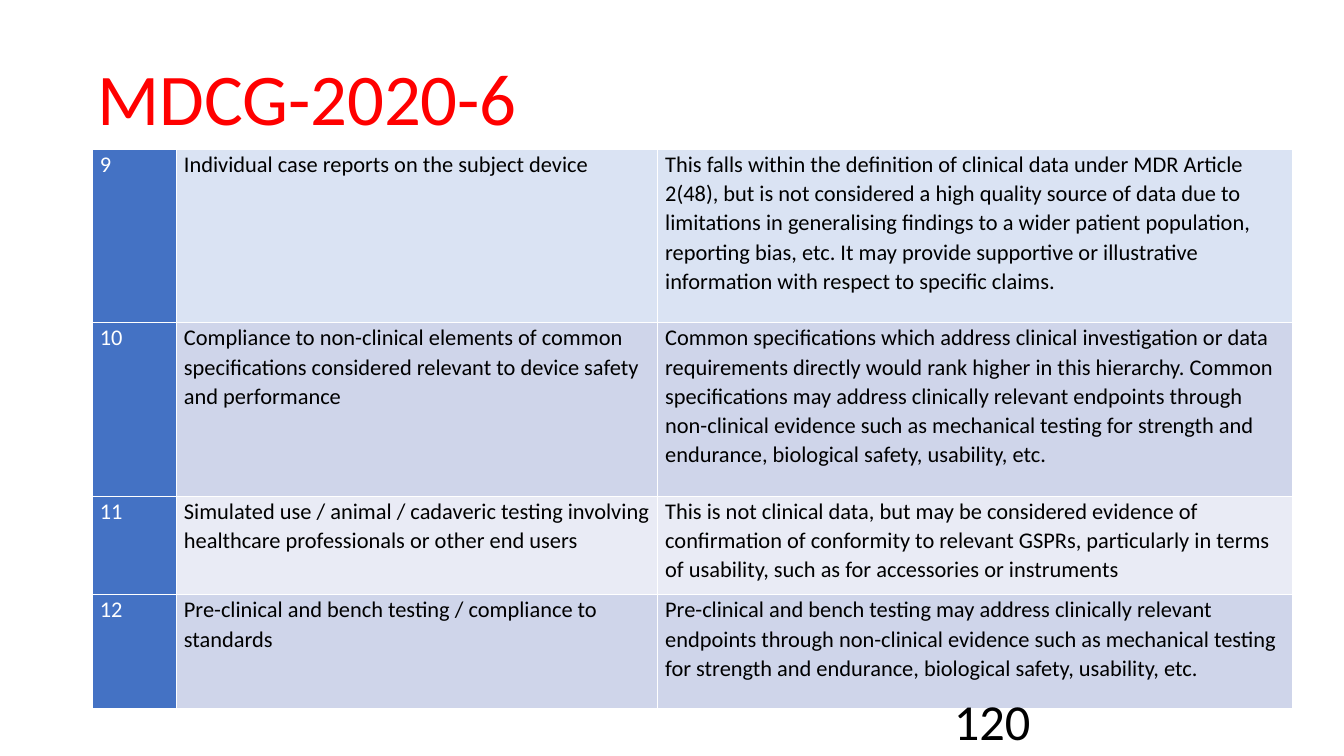
from typing import NamedTuple

from lxml.etree import SubElement as Sub
from pptx import Presentation
from pptx.dml.color import RGBColor
from pptx.enum.text import MSO_ANCHOR as Anchor, PP_ALIGN as Align
from pptx.oxml.ns import qn
from pptx.util import Inches, Pt

WHITE, BLACK, RED, BLUE = "FFFFFF", "000000", "FF0000", "4472C4"
COLS = (1.67, 9.55, 12.59)


class Row(NamedTuple):
    rank: str
    kind: str
    note: str
    high: float
    fill: str


class Label(NamedTuple):
    text: str
    box: tuple[float, float, float, float]
    size: int
    color: str
    lead: float


ROWS = [
    Row("9", "Individual case reports on the subject device",
        "This falls within the definition of clinical data under MDR Article 2(48), "
        "but is not considered a high quality source of data due to limitations in "
        "generalising findings to a wider patient population, reporting bias, etc. "
        "It may provide supportive or illustrative information with respect to "
        "specific claims.", 3.44, "DAE3F3"),
    Row("10", "Compliance to non-clinical elements of common specifications "
        "considered relevant to device safety and performance",
        "Common specifications which address clinical investigation or data "
        "requirements directly would rank higher in this hierarchy. Common "
        "specifications may address clinically relevant endpoints through "
        "non-clinical evidence such as mechanical testing for strength and "
        "endurance, biological safety, usability, etc.", 3.44, "CFD5EA"),
    Row("11", "Simulated use / animal / cadaveric testing involving healthcare "
        "professionals or other end users",
        "This is not clinical data, but may be considered evidence of confirmation "
        "of conformity to relevant GSPRs, particularly in terms of usability, such "
        "as for accessories or instruments", 1.96, "E9EBF5"),
    Row("12", "Pre-clinical and bench testing / compliance to standards",
        "Pre-clinical and bench testing may address clinically relevant endpoints "
        "through non-clinical evidence such as mechanical testing for strength and "
        "endurance, biological safety, usability, etc.", 2.26, "CFD5EA"),
]
LABELS = [
    Label("MDCG-2020-6", (1.83, 0.57, 11.29, 2.9), 104, RED, 0.9),
    Label("120", (18.83, 13.9, 6, 0.8), 72, BLACK, 1),
]


def rgb(code: str) -> RGBColor:
    return RGBColor.from_string(code)


def put(frame, text: str, size: int, color: str, lead: float) -> None:
    """Write one left-aligned paragraph into a text frame."""
    frame.word_wrap = True
    para = frame.paragraphs[0]
    para.alignment, para.line_spacing = Align.LEFT, lead
    run = para.add_run()
    run.text = text
    for key, val in {"name": "Calibri", "size": Pt(size)}.items():
        setattr(run.font, key, val)
    run.font.color.rgb = rgb(color)


def edge(cell) -> None:
    """Give a cell white one-point borders; call it before filling."""
    props = cell._tc.get_or_add_tcPr()
    for side in "LRTB":
        line = Sub(props, qn(f"a:ln{side}"), w=str(Pt(1)))
        Sub(Sub(line, qn("a:solidFill")), qn("a:srgbClr"), val=WHITE)


def draw_cell(cell, text: str, fill: str, color: str) -> None:
    edge(cell)
    cell.fill.solid()
    cell.fill.fore_color.rgb = rgb(fill)
    form = {"margin_left": Inches(0.15), "margin_right": Inches(0.15),
            "margin_top": 0, "margin_bottom": 0}
    for key, val in form.items():
        setattr(cell, key, val)
    put(cell.text_frame, text, 32, color, 1.07)


def draw_table(slide, rows: list[Row]) -> None:
    high = sum(row.high for row in rows)
    table = slide.shapes.add_table(
        len(rows), len(COLS), Inches(1.83), Inches(2.96),
        Inches(sum(COLS)), Inches(high)).table
    table.first_row = table.horz_banding = False
    for col, wide in zip(table.columns, COLS):
        col.width = Inches(wide)
    for row, line in zip(rows, table.rows):
        line.height = Inches(row.high)
        texts = (row.rank, row.kind, row.note)
        for i, (cell, text) in enumerate(zip(line.cells, texts)):
            look = (row.fill, BLACK) if i else (BLUE, WHITE)
            draw_cell(cell, text, *look)


def draw_label(slide, label: Label) -> None:
    frame = slide.shapes.add_textbox(*map(Inches, label.box)).text_frame
    frame.vertical_anchor = Anchor.MIDDLE
    put(frame, label.text, label.size, label.color, label.lead)


def main() -> None:
    deck = Presentation()
    deck.slide_width, deck.slide_height = Inches(26.67), Inches(15)
    slide = deck.slides.add_slide(deck.slide_layouts[6])
    title, number = LABELS
    draw_label(slide, title)
    draw_table(slide, ROWS)
    draw_label(slide, number)
    deck.save("out.pptx")


if __name__ == "__main__":
    main()
